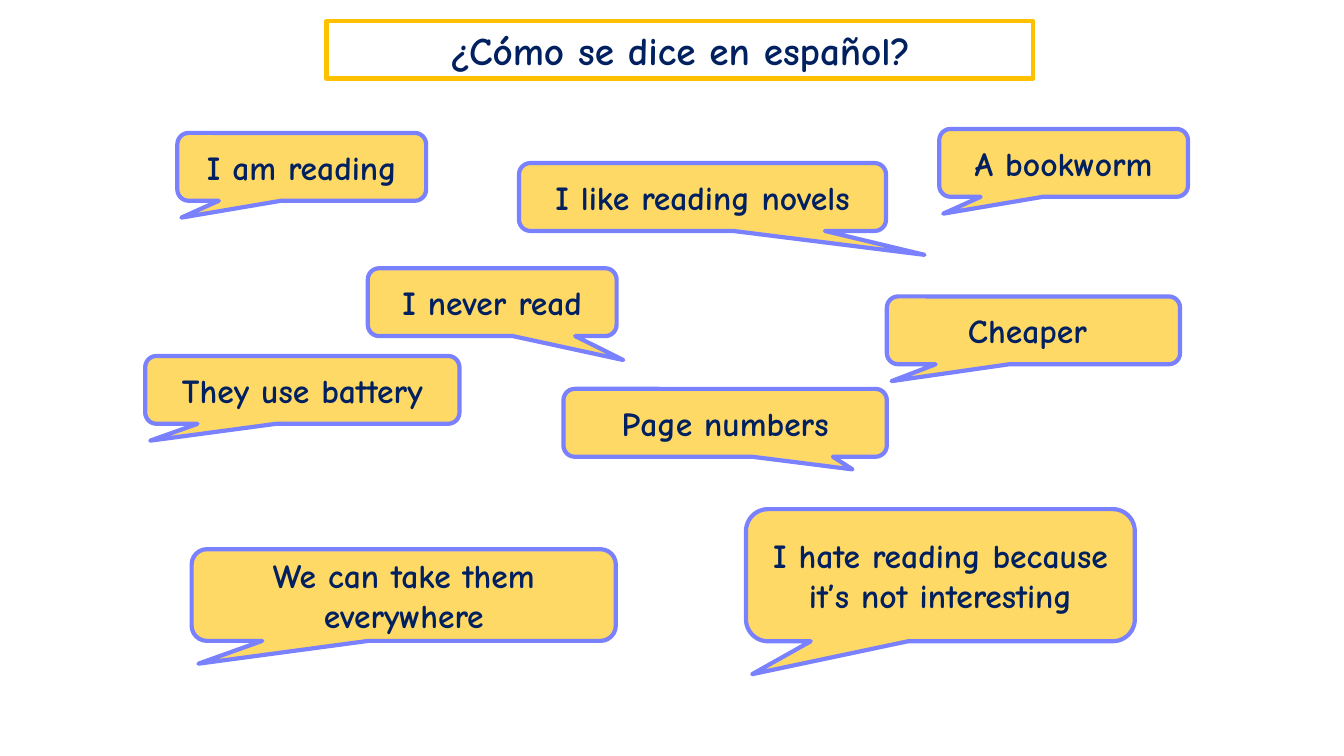
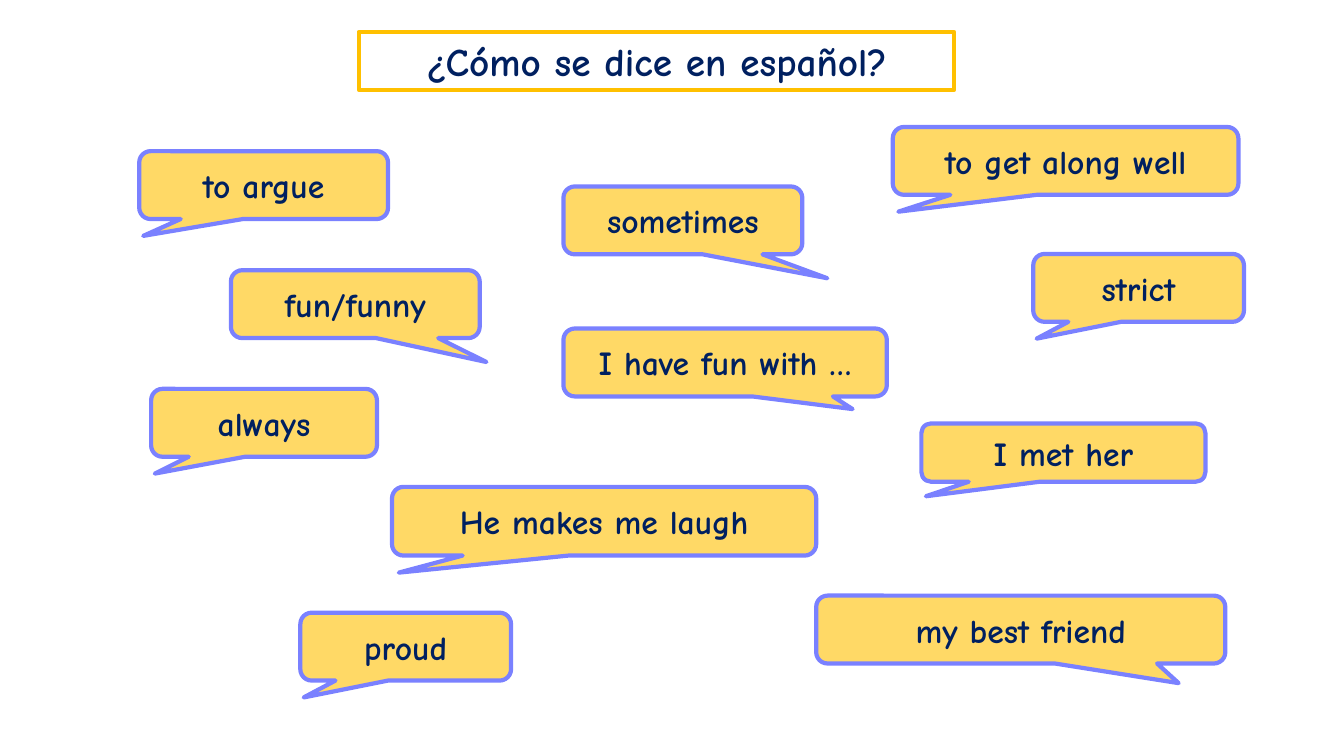
from dataclasses import dataclass
from enum import Enum
from typing import NamedTuple

from pptx import Presentation
from pptx.dml.color import RGBColor
from pptx.enum.shapes import MSO_SHAPE
from pptx.enum.text import MSO_ANCHOR, MSO_AUTO_SIZE, PP_ALIGN
from pptx.util import Cm, Pt


@dataclass(frozen=True)
class Theme:
    font: str = "Comic Neue"
    text: RGBColor = RGBColor(0x00, 0x20, 0x60)
    paper: RGBColor = RGBColor(0xFF, 0xFF, 0xFF)
    title_line: RGBColor = RGBColor(0xFF, 0xC0, 0x00)
    bubble_fill: RGBColor = RGBColor(0xFF, 0xD9, 0x66)
    bubble_line: RGBColor = RGBColor(0x7A, 0x81, 0xFF)
    title_size: Pt = Pt(28)
    bubble_size: Pt = Pt(24)
    line_width: Pt = Pt(3)


THEME = Theme()
TITLE = "¿Cómo se dice en español?"
CORNER = 0.167
TITLE_HEIGHT = 1.45
BUBBLE_HEIGHT = 1.71


class Tail(Enum):
    LEFT = (-0.484, 0.749)
    FAR_RIGHT = (0.605, 0.853)
    RIGHT = (0.527, 0.853)
    SHORT_RIGHT = (0.394, 0.687)
    MID_RIGHT = (0.386, 0.79)


class Box(NamedTuple):
    left: float
    top: float
    width: float
    height: float = BUBBLE_HEIGHT


class Phrase(NamedTuple):
    text: str
    box: Box
    tail: Tail = Tail.LEFT


READING = [
    Phrase("I am reading", Box(4.47, 3.35, 6.27)),
    Phrase("I like reading novels", Box(13.08, 4.11, 9.25), Tail.FAR_RIGHT),
    Phrase("I never read", Box(9.27, 6.76, 6.27), Tail.RIGHT),
    Phrase("A bookworm", Box(23.67, 3.25, 6.27)),
    Phrase("They use battery", Box(3.66, 8.97, 7.92)),
    Phrase("Cheaper ", Box(22.35, 7.47, 7.39)),
    Phrase("Page numbers", Box(14.2, 9.8, 8.15), Tail.SHORT_RIGHT),
    Phrase("I hate reading because it’s not interesting", Box(18.8, 12.83, 9.8, 3.33)),
    Phrase("We can take them everywhere", Box(4.83, 13.84, 10.69, 2.31)),
]

PEOPLE = [
    Phrase("to argue", Box(3.51, 3.81, 6.27)),
    Phrase("sometimes", Box(14.2, 4.7, 6.02), Tail.FAR_RIGHT),
    Phrase("fun/funny", Box(5.82, 6.81, 6.27), Tail.RIGHT),
    Phrase("to get along well", Box(22.5, 3.2, 8.71)),
    Phrase("always", Box(3.81, 9.8, 5.69)),
    Phrase("strict", Box(26.04, 6.4, 5.31)),
    Phrase("I have fun with …", Box(14.2, 8.28, 8.15), Tail.SHORT_RIGHT),
    Phrase("I met her", Box(23.22, 10.67, 7.16, 1.47)),
    Phrase("He makes me laugh", Box(9.88, 12.27, 10.69, 1.73)),
    Phrase("my best friend", Box(20.57, 15.01, 10.31), Tail.MID_RIGHT),
    Phrase("proud", Box(7.57, 15.44, 5.31)),
]


def set_attributes(target, values):
    for name, value in values.items():
        setattr(target, name, value)


def add_panel(slide, kind, box, text, fill, line, size, frame_format):
    shape = slide.shapes.add_shape(kind, *map(Cm, box))
    shape.shadow.inherit = False
    shape.fill.solid()
    shape.fill.fore_color.rgb = fill
    shape.line.color.rgb = line
    shape.line.width = THEME.line_width
    set_attributes(shape.text_frame, {"word_wrap": True, **frame_format})
    paragraph = shape.text_frame.paragraphs[0]
    paragraph.alignment = PP_ALIGN.CENTER
    run = paragraph.add_run()
    run.text = text
    set_attributes(run.font, {"name": THEME.font, "size": size, "bold": True})
    run.font.color.rgb = THEME.text
    return shape


def add_title(slide, box):
    frame_format = {
        "vertical_anchor": MSO_ANCHOR.TOP,
        "auto_size": MSO_AUTO_SIZE.SHAPE_TO_FIT_TEXT,
    }
    add_panel(slide, MSO_SHAPE.RECTANGLE, box, TITLE, THEME.paper,
              THEME.title_line, THEME.title_size, frame_format)


def add_bubble(slide, phrase):
    shape = add_panel(slide, MSO_SHAPE.ROUNDED_RECTANGULAR_CALLOUT, phrase.box,
                      phrase.text, THEME.bubble_fill, THEME.bubble_line,
                      THEME.bubble_size, {"vertical_anchor": MSO_ANCHOR.MIDDLE})
    for index, value in enumerate((*phrase.tail.value, CORNER)):
        shape.adjustments[index] = value


def add_phrase_slide(presentation, title_box, phrases):
    slide = presentation.slides.add_slide(presentation.slide_layouts[6])
    add_title(slide, title_box)
    for phrase in phrases:
        add_bubble(slide, phrase)


def main():
    presentation = Presentation()
    set_attributes(presentation, {"slide_width": Cm(33.87), "slide_height": Cm(19.05)})
    add_phrase_slide(presentation, Box(8.23, 0.53, 17.81, TITLE_HEIGHT), READING)
    add_phrase_slide(presentation, Box(9.04, 0.81, 15.01, TITLE_HEIGHT), PEOPLE)
    presentation.save("out.pptx")


if __name__ == "__main__":
    main()
